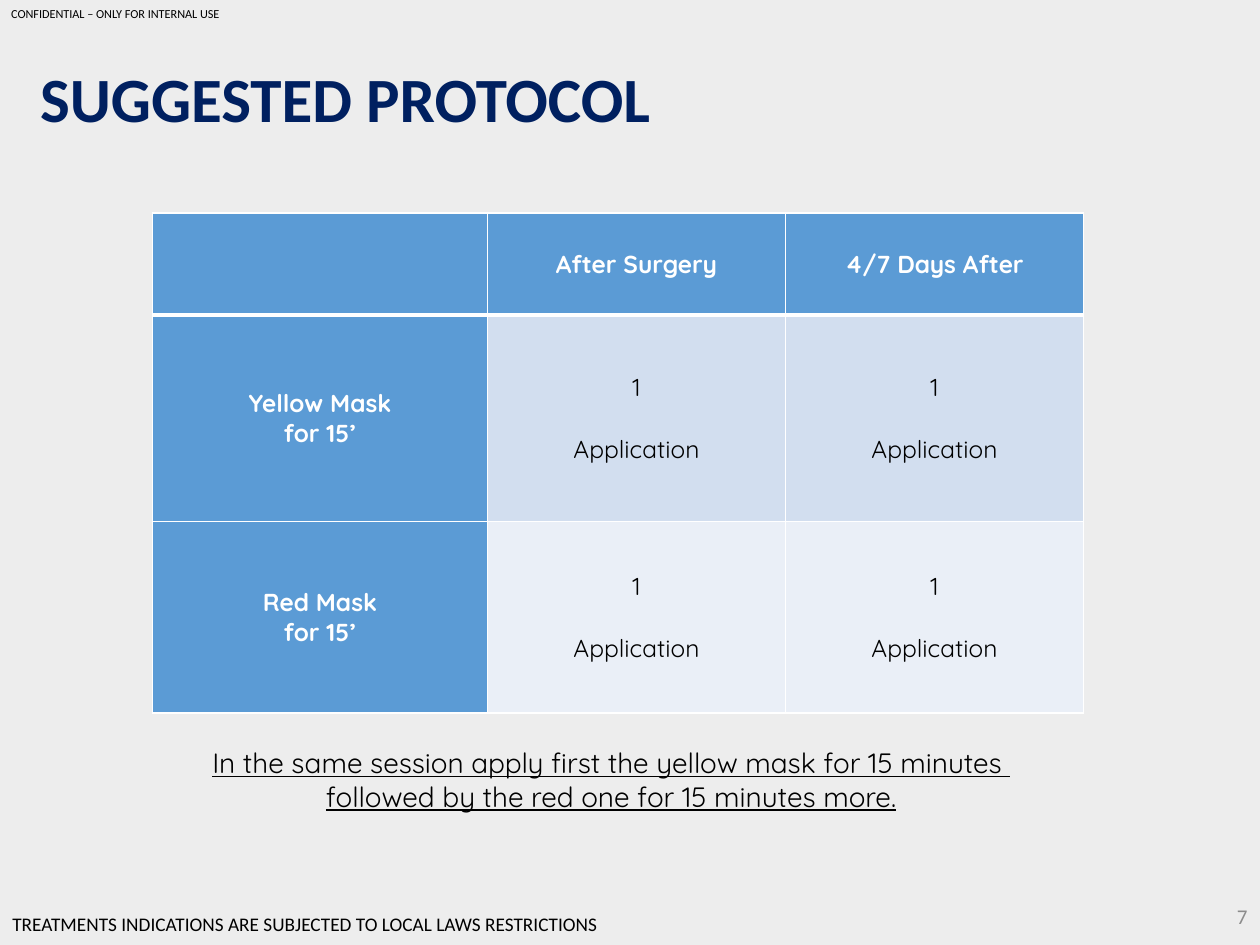
"""Build the suggested protocol slide with its treatment table."""
from lxml import etree
from pptx import Presentation
from pptx.dml.color import RGBColor
from pptx.enum.text import MSO_ANCHOR, PP_ALIGN
from pptx.oxml.ns import qn
from pptx.util import Inches, Pt

LEFT, CENTER, RIGHT = PP_ALIGN.LEFT, PP_ALIGN.CENTER, PP_ALIGN.RIGHT
TOP, MIDDLE = MSO_ANCHOR.TOP, MSO_ANCHOR.MIDDLE

BACKGROUND = RGBColor(0xED, 0xED, 0xED)
NAVY = RGBColor(0x00, 0x20, 0x60)
BLUE = RGBColor(0x5B, 0x9B, 0xD5)
LIGHT_BLUE = RGBColor(0xD2, 0xDE, 0xEF)
PALE_BLUE = RGBColor(0xEA, 0xEF, 0xF7)
GREY = RGBColor(0x8C, 0x8C, 0x8C)
BLACK = RGBColor(0x00, 0x00, 0x00)
WHITE = RGBColor(0xFF, 0xFF, 0xFF)

COLUMN = ROW = Inches(0.1)


def write(frame, lines, color, align, gap, font):
    for index, line in enumerate(lines):
        para = frame.paragraphs[0] if index == 0 else frame.add_paragraph()
        para.alignment = align
        para.space_before = Pt(gap if index else 0)
        span = para.add_run()
        span.text = line
        span.font.color.rgb = color
        for name, value in font.items():
            setattr(span.font, name, value)


def add_border(cell, side, width):
    props = cell._tc.get_or_add_tcPr()
    line = etree.SubElement(props, qn(f"a:ln{side}"), w=str(Pt(width)))
    fill = etree.SubElement(line, qn("a:solidFill"))
    etree.SubElement(fill, qn("a:srgbClr"), val=str(WHITE))


deck = Presentation()
deck.slide_width, deck.slide_height = 100 * COLUMN, 75 * ROW
page = deck.slides.add_slide(deck.slide_layouts[6])
page.background.fill.solid()
page.background.fill.fore_color.rgb = BACKGROUND

texts = [
    ((92.8, 70.7, 7.2, 4), ["7"], GREY, RIGHT, MIDDLE, True,
     {"name": "Calibri", "size": Pt(12)}),
    ((2.2, 4.2, 71.4, 7.1), ["SUGGESTED PROTOCOL"], NAVY, LEFT, TOP, True,
     {"name": "Calibri", "size": Pt(36), "bold": True}),
    ((-0.1, 0, 18.9, 2.2), ["CONFIDENTIAL – ONLY FOR INTERNAL USE"], BLACK, LEFT, TOP, False,
     {"name": "Calibri", "size": Pt(7)}),
    ((11, 58.7, 75, 6.4),
     ["In the same session apply first the yellow mask for 15 minutes ",
      "followed by the red one for 15 minutes more."], BLACK, CENTER, TOP, True,
     {"name": "Quicksand", "size": Pt(16), "underline": True}),
    ((0, 71.9, 79.7, 2.9),
     ["TREATMENTS INDICATIONS ARE SUBJECTED TO LOCAL LAWS RESTRICTIONS"], BLACK, LEFT, TOP, True,
     {"name": "Calibri", "size": Pt(11)}),
]
for (left, top, width, height), lines, color, align, anchor, wrap, font in texts:
    box = page.shapes.add_textbox(
        round(left * COLUMN), round(top * ROW), round(width * COLUMN), round(height * ROW))
    box.text_frame.word_wrap = wrap
    box.text_frame.vertical_anchor = anchor
    write(box.text_frame, lines, color, align, 0, font)

dose = ["1", "Application"]
protocol = [
    [[], ["After Surgery"], ["4/7 Days After"]],
    [["Yellow Mask", "for 15’"], dose, dose],
    [["Red Mask", "for 15’"], dose, dose],
]
column_widths = [26.6, 23.65, 23.65]
row_heights = [8.1, 16.4, 15.2]
body_fills = [BLUE, LIGHT_BLUE, PALE_BLUE]

table = page.shapes.add_table(
    len(row_heights), len(column_widths), round(12.1 * COLUMN), round(16.9 * ROW),
    round(sum(column_widths) * COLUMN), round(sum(row_heights) * ROW)).table
table.first_row = table.horz_banding = False
for column, width in zip(table.columns, column_widths):
    column.width = round(width * COLUMN)
for row, height in zip(table.rows, row_heights):
    row.height = round(height * ROW)

cell_format = {
    "vertical_anchor": MIDDLE, "margin_left": Inches(0.07), "margin_right": Inches(0.07),
    "margin_top": 0, "margin_bottom": 0,
}
for row_index, row_texts in enumerate(protocol):
    for column_index, lines in enumerate(row_texts):
        cell = table.cell(row_index, column_index)
        heading = row_index == 0 or column_index == 0
        for name, value in cell_format.items():
            setattr(cell, name, value)
        for side in "LRTB":
            thick = (row_index, side) in [(0, "B"), (1, "T")]
            add_border(cell, side, 3 if thick else 1)
        cell.fill.solid()
        cell.fill.fore_color.rgb = BLUE if heading else body_fills[row_index]
        write(cell.text_frame, lines, WHITE if heading else BLACK, CENTER,
              0 if heading else 17.5,
              {"name": "Quicksand", "size": Pt(14), "bold": heading})

deck.save("out.pptx")
